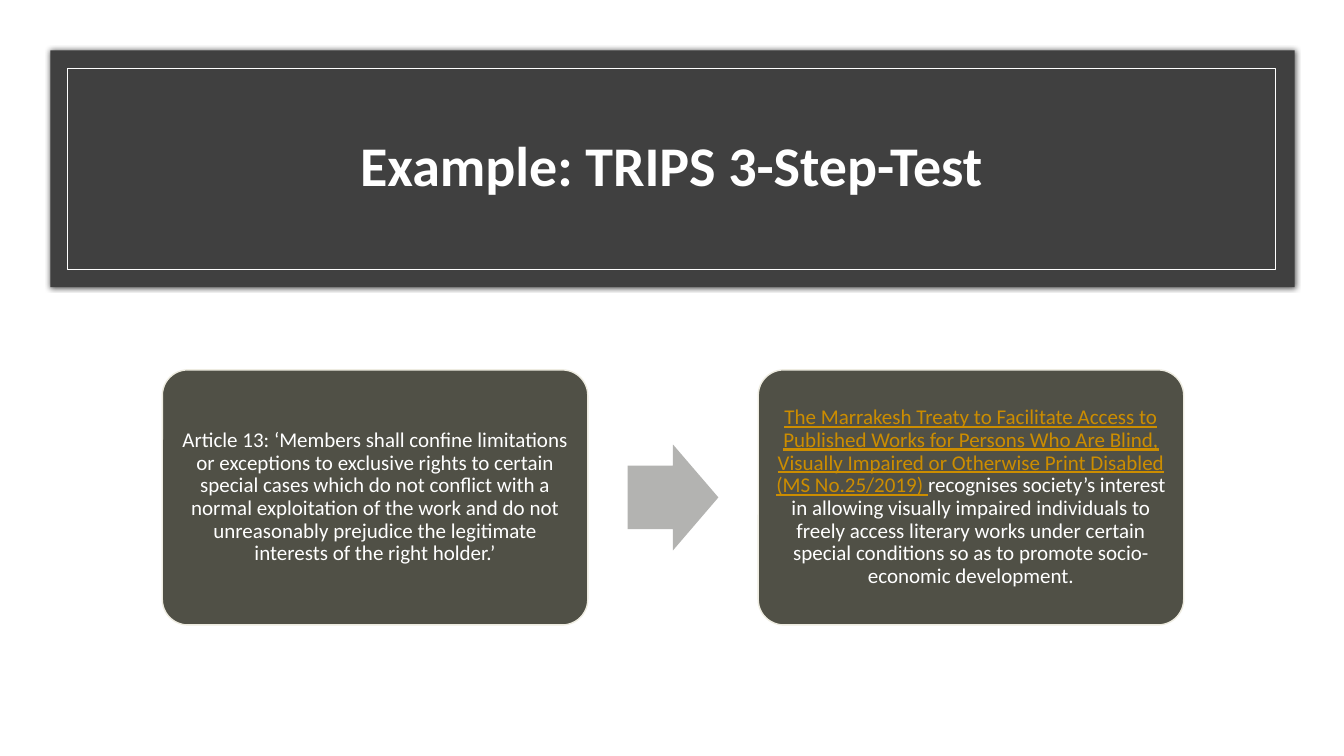
from pptx import Presentation
from pptx.dml.color import RGBColor
from pptx.enum.shapes import MSO_SHAPE
from pptx.enum.text import MSO_ANCHOR, PP_ALIGN
from pptx.oxml import parse_xml
from pptx.oxml.ns import nsdecls
from pptx.util import Inches, Pt

HUES = {"white": "FFFFFF", "band": "404040", "card": "505046",
        "edge": "EEECE1", "arrow": "B3B3B1", "link": "CC8D00"}
TITLE = [("Example: TRIPS 3-Step-Test", "white", False)]
CARDS = [
    [("Article 13: ‘Members shall confine limitations or exceptions to "
      "exclusive rights to certain special cases which do not conflict with a "
      "normal exploitation of the work and do not unreasonably prejudice the "
      "legitimate interests of the right holder.’", "white", False)],
    [("The Marrakesh Treaty to Facilitate Access to Published Works for "
      "Persons Who Are Blind, Visually Impaired or Otherwise Print Disabled "
      "(MS No.25/2019) ", "link", True),
     ("recognises society’s interest in allowing visually impaired "
      "individuals to freely access literary works under certain special "
      "conditions so as to promote socio-economic development.",
      "white", False)],
]
LEFT, TOP, WIDE, HIGH, STEP = 1.61, 3.67, 4.22, 2.53, 5.91
ARROW_W, ARROW_H = 0.9, 1.05


def hue(name):
    return RGBColor.from_string(HUES[name])


def add_box(kind, box, fill=None, line=None, width=1):
    shape = slide.shapes.add_shape(kind, *map(Inches, box))
    shape.shadow.inherit = False
    if fill:
        shape.fill.solid()
        shape.fill.fore_color.rgb = hue(fill)
    else:
        shape.fill.background()
    if line:
        shape.line.color.rgb = hue(line)
        shape.line.width = Pt(width)
    else:
        shape.line.fill.background()
    return shape


def add_text(shape, runs, size, bold=False, pad=None):
    frame = shape.text_frame
    frame.word_wrap = True
    frame.vertical_anchor = MSO_ANCHOR.MIDDLE
    if pad is not None:
        frame.margin_left = frame.margin_right = Inches(pad)
        frame.margin_top = frame.margin_bottom = Inches(pad)
    para = frame.paragraphs[0]
    para.alignment = PP_ALIGN.CENTER
    para.line_spacing = 0.9
    for text, tint, under in runs:
        run = para.add_run()
        run.text = text
        run.font.name = "Calibri"
        run.font.size = Pt(size)
        run.font.bold = bold
        run.font.underline = under
        run.font.color.rgb = hue(tint)


def add_glow(shape):
    props = shape.fill._xPr
    props.remove(props.find("{*}effectLst"))
    props.append(parse_xml(
        f'<a:effectLst {nsdecls("a")}><a:outerShdw blurRad="{Pt(4)}" dist="0" '
        'dir="0" algn="ctr" rotWithShape="0"><a:srgbClr val="000000">'
        '<a:alpha val="66000"/></a:srgbClr></a:outerShdw></a:effectLst>'))


deck = Presentation()
deck.slide_width, deck.slide_height = Inches(13.33), Inches(7.5)
slide = deck.slides.add_slide(deck.slide_layouts[6])

add_glow(add_box(MSO_SHAPE.RECTANGLE, (0.5, 0.5, 12.34, 2.35), "band"))
add_box(MSO_SHAPE.RECTANGLE, (0.67, 0.68, 11.98, 1.99), line="white", width=0.5)
title = slide.shapes.add_textbox(*map(Inches, (1.16, 0.92, 11, 1.5)))
add_text(title, TITLE, 40, bold=True)

for i, runs in enumerate(CARDS):
    card = add_box(MSO_SHAPE.ROUNDED_RECTANGLE,
                   (LEFT + i * STEP, TOP, WIDE, HIGH), "card", "edge")
    card.adjustments[0] = 0.1
    add_text(card, runs, 15, pad=0.06)

mid = LEFT + (WIDE + STEP) / 2
arrow = add_box(MSO_SHAPE.RIGHT_ARROW,
                (mid - ARROW_W / 2, TOP + (HIGH - ARROW_H) / 2, ARROW_W, ARROW_H),
                "arrow")
arrow.adjustments[0] = 0.6
arrow.adjustments[1] = 0.5

deck.save("out.pptx")
